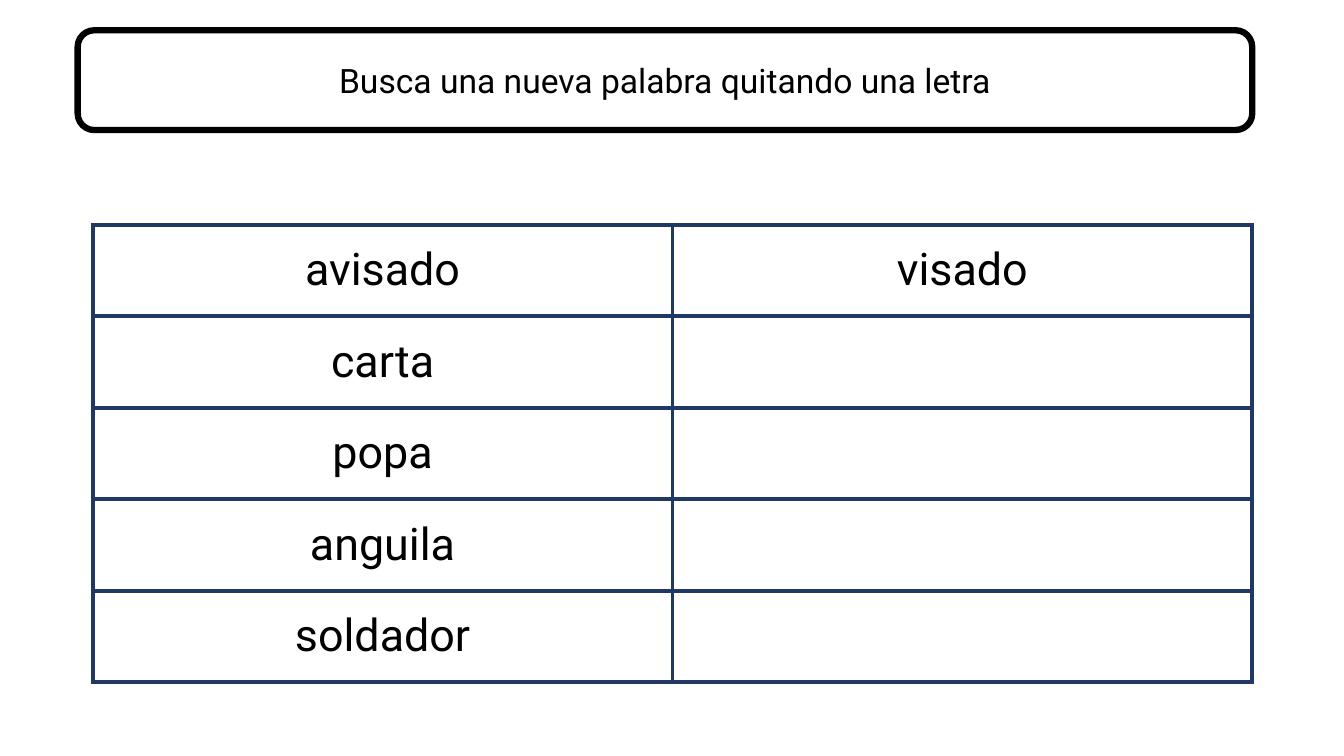
from lxml import etree
from pptx import Presentation
from pptx import util as u
from pptx.dml.color import RGBColor
from pptx.enum import shapes, text
from pptx.oxml.ns import qn

TITLE = "Busca una nueva palabra quitando una letra"
WORDS = [
    ("avisado", "visado"),
    ("carta", ""),
    ("popa", ""),
    ("anguila", ""),
    ("soldador", ""),
]
FONT = "Roboto"
BLACK, WHITE, NAVY = "000000", "FFFFFF", "203864"
WIDTH, HEIGHT = 13.33, 7.5
TITLE_AREA = (0.77, 0.3, 11.65, 0.99)
TABLE_AREA = (0.92, 2.23, 11.5, 4.54)
TITLE_SIZE, WORD_SIZE = 24, 32
TITLE_LINE, GRID_LINE = 4.5, 3


def color(value):
    return RGBColor.from_string(value)


def paint(item, value):
    item.fill.solid()
    item.fill.fore_color.rgb = color(value)


def write(frame, words, size):
    frame.text = words
    para = frame.paragraphs[0]
    para.alignment = text.PP_ALIGN.CENTER
    for span in para.runs:
        span.font.name = FONT
        span.font.size = u.Pt(size)
        span.font.color.rgb = color(BLACK)


def add_borders(cell):
    properties = cell._tc.get_or_add_tcPr()
    for side in ("lnL", "lnR", "lnT", "lnB"):
        line = etree.SubElement(properties, qn(f"a:{side}"), w=str(u.Pt(GRID_LINE)))
        fill = etree.SubElement(line, qn("a:solidFill"))
        etree.SubElement(fill, qn("a:srgbClr"), val=NAVY)


def add_title(page):
    box = page.shapes.add_shape(
        shapes.MSO_SHAPE.ROUNDED_RECTANGLE, *map(u.Inches, TITLE_AREA)
    )
    box.shadow.inherit = False
    paint(box, WHITE)
    box.line.color.rgb = color(BLACK)
    box.line.width = u.Pt(TITLE_LINE)
    box.text_frame.vertical_anchor = text.MSO_ANCHOR.MIDDLE
    write(box.text_frame, TITLE, TITLE_SIZE)


def add_words(page):
    rows, columns = len(WORDS), len(WORDS[0])
    table = page.shapes.add_table(rows, columns, *map(u.Inches, TABLE_AREA)).table
    table.first_row = table.horz_banding = False
    for row, pair in enumerate(WORDS):
        for column, word in enumerate(pair):
            cell = table.cell(row, column)
            add_borders(cell)
            paint(cell, WHITE)
            cell.vertical_anchor = text.MSO_ANCHOR.MIDDLE
            write(cell.text_frame, word, WORD_SIZE)


def main():
    deck = Presentation()
    deck.slide_width, deck.slide_height = u.Inches(WIDTH), u.Inches(HEIGHT)
    page = deck.slides.add_slide(deck.slide_layouts[6])
    add_title(page)
    add_words(page)
    deck.save("out.pptx")


if __name__ == "__main__":
    main()
